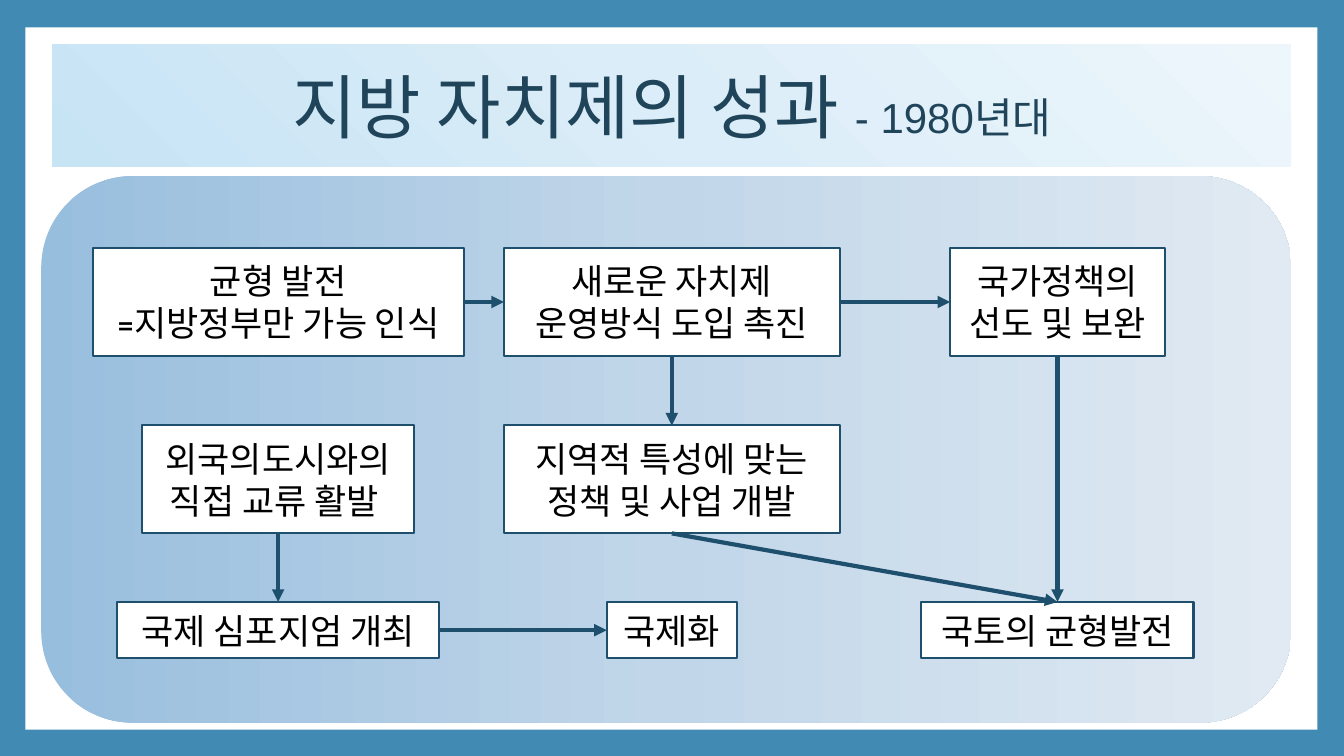
from lxml import etree
from pptx import Presentation
from pptx import util as u
from pptx.dml.color import RGBColor
from pptx.enum import shapes, text
from pptx.oxml.ns import qn

BLUE = RGBColor(0x41, 0x8A, 0xB3)
WHITE = RGBColor(0xFF, 0xFF, 0xFF)
BLACK = RGBColor(0, 0, 0)
NAVY = RGBColor(0x1E, 0x50, 0x6E)
TITLE_INK = RGBColor(0x20, 0x45, 0x5A)
PANEL_COLORS = [RGBColor(0x98, 0xBE, 0xDE), RGBColor(0xC1, 0xD6, 0xE9), RGBColor(0xE1, 0xEA, 0xF3)]
TITLE_COLORS = [RGBColor(0xC7, 0xE4, 0xF5), RGBColor(0xDB, 0xED, 0xF8), RGBColor(0xED, 0xF6, 0xFB)]

SLIDE_SIZE = (33.87, 19.05)
FRAME_BOX = (0.64, 0.69, 32.56, 17.7)
TITLE_BOX = (1.32, 1.12, 31.22, 3.07)
PANEL_BOX = (1.04, 4.44, 31.5, 13.77)

COLUMNS = (5.97, 15.89, 25.61)
ROWS = (3.17, 7.64, 11.44)
HEIGHTS = (2.72, 2.72, 1.42)
TOP, LEFT, BOTTOM, RIGHT = range(4)

STEPS = {
    "balance": (0, 0, 9.35, ["균형 발전", "=지방정부만 가능 인식"], "Cabin"),
    "method": (1, 0, 8.46, ["새로운 자치제 운영방식 도입 촉진"], "Arial"),
    "policy": (2, 0, 5.41, ["국가정책의 선도 및 보완"], "Cabin"),
    "exchange": (0, 1, 6.86, ["외국의도시와의 직접 교류 활발 "], "Cabin"),
    "regional": (1, 1, 8.46, ["지역적 특성에 맞는 정책 및 사업 개발"], "Cabin"),
    "symposium": (0, 2, 8.13, ["국제 심포지엄 개최"], "Cabin"),
    "global": (1, 2, 3.28, ["국제화"], "Cabin"),
    "nation": (2, 2, 6.86, ["국토의 균형발전"], "Cabin"),
}
ARROWS = [
    ("balance", RIGHT, "method", LEFT),
    ("method", RIGHT, "policy", LEFT),
    ("method", BOTTOM, "regional", TOP),
    ("policy", BOTTOM, "nation", TOP),
    ("regional", BOTTOM, "nation", TOP),
    ("exchange", BOTTOM, "symposium", TOP),
    ("symposium", RIGHT, "global", LEFT),
]


def lengths(box):
    return [u.Cm(value) for value in box]


def write(paragraph, content, size=25, font="Cabin", color=BLACK):
    paragraph.alignment = text.PP_ALIGN.CENTER
    run = paragraph.add_run()
    run.text = content
    run.font.size = u.Pt(size)
    run.font.name = font
    run.font.color.rgb = color


def fill_gradient(shape, colors, from_corner=False):
    shape.fill.gradient()
    gradient = shape._element.spPr.find(qn("a:gradFill"))
    for child in list(gradient):
        gradient.remove(child)
    stops = etree.SubElement(gradient, qn("a:gsLst"))
    for index, color in enumerate(colors):
        stop = etree.SubElement(stops, qn("a:gs"), pos=str(index * 50000))
        etree.SubElement(stop, qn("a:srgbClr"), val=str(color))
    if from_corner:
        circle = etree.SubElement(gradient, qn("a:path"), path="circle")
        etree.SubElement(circle, qn("a:fillToRect"), t="100000", r="100000")
    else:
        etree.SubElement(gradient, qn("a:lin"), ang="0", scaled="0")


def add_box(slide, box, kind=shapes.MSO_SHAPE.RECTANGLE, outlined=False):
    shape = slide.shapes.add_shape(kind, *lengths(box))
    shape.shadow.inherit = False
    shape.fill.solid()
    shape.fill.fore_color.rgb = WHITE
    if outlined:
        shape.line.color.rgb = NAVY
        shape.line.width = u.Pt(1.5)
    else:
        shape.line.fill.background()
    return shape


def add_frame(slide, box):
    slide.background.fill.solid()
    slide.background.fill.fore_color.rgb = BLUE
    frame = add_box(slide, box)
    slide.slide_layout.shapes._spTree.insert(2, frame._element)


def add_title(slide, box):
    title = slide.shapes.title
    title.left, title.top, title.width, title.height = lengths(box)
    fill_gradient(title, TITLE_COLORS, from_corner=True)
    title.text_frame.vertical_anchor = text.MSO_ANCHOR.MIDDLE
    paragraph = title.text_frame.paragraphs[0]
    write(paragraph, "지방 자치제의 성과 ", size=50, font="Arial", color=TITLE_INK)
    write(paragraph, "- 1980년대", size=30, font="Arial", color=TITLE_INK)


def add_step(slide, box, lines, font):
    shape = add_box(slide, box, outlined=True)
    frame = shape.text_frame
    frame.word_wrap = True
    frame.vertical_anchor = text.MSO_ANCHOR.MIDDLE
    for index, line in enumerate(lines):
        paragraph = frame.add_paragraph() if index else frame.paragraphs[0]
        write(paragraph, line, font=font)
    return shape


def add_arrow(slide, start, start_side, end, end_side):
    arrow = slide.shapes.add_connector(shapes.MSO_CONNECTOR.STRAIGHT, 0, 0, 0, 0)
    arrow.begin_connect(start, start_side)
    arrow.end_connect(end, end_side)
    arrow.line.color.rgb = NAVY
    arrow.line.width = u.Pt(3)
    etree.SubElement(arrow.line._get_or_add_ln(), qn("a:tailEnd"), type="triangle")
    etree.SubElement(arrow._element.spPr, qn("a:effectLst"))


def add_flow(slide, box):
    panel = add_box(slide, box, kind=shapes.MSO_SHAPE.ROUNDED_RECTANGLE)
    fill_gradient(panel, PANEL_COLORS)
    left, top = box[:2]
    steps = {}
    for name, (column, row, width, lines, font) in STEPS.items():
        height = HEIGHTS[row]
        step_box = (left + COLUMNS[column] - width / 2, top + ROWS[row] - height / 2, width, height)
        steps[name] = add_step(slide, step_box, lines, font)
    for start, start_side, end, end_side in ARROWS:
        add_arrow(slide, steps[start], start_side, steps[end], end_side)


def main():
    presentation = Presentation()
    presentation.slide_width, presentation.slide_height = lengths(SLIDE_SIZE)
    slide = presentation.slides.add_slide(presentation.slide_layouts[5])
    add_frame(slide, FRAME_BOX)
    add_title(slide, TITLE_BOX)
    add_flow(slide, PANEL_BOX)
    presentation.save("out.pptx")


if __name__ == "__main__":
    main()
